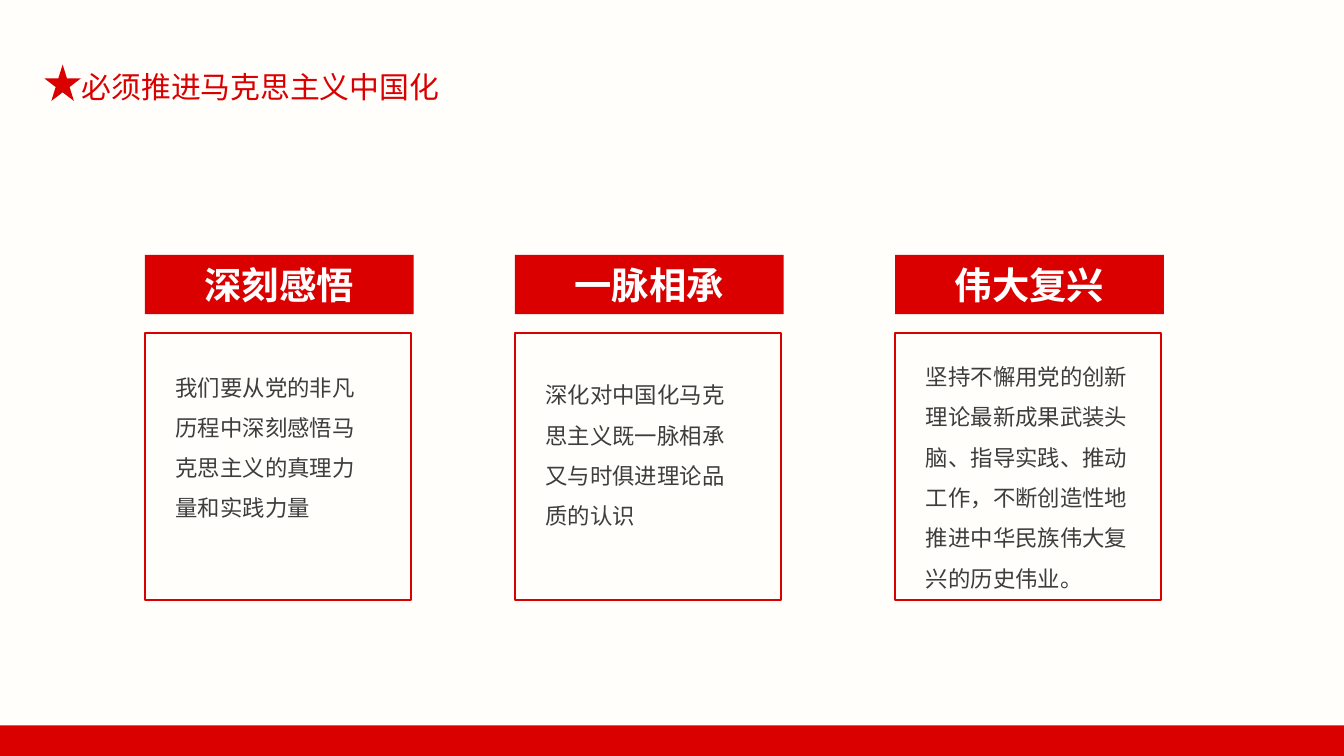
from dataclasses import dataclass
from typing import Any, Optional

import pptx
import pptx.dml.color
import pptx.enum.shapes
import pptx.enum.text
import pptx.oxml.ns
import pptx.util
from lxml import etree

Cm = pptx.util.Cm
Pt = pptx.util.Pt
Kind = pptx.enum.shapes.MSO_SHAPE
Align = pptx.enum.text.PP_ALIGN
Anchor = pptx.enum.text.MSO_ANCHOR


@dataclass(frozen=True)
class Theme:
    paper: str = "FFFEFB"
    red: str = "DA0000"
    white: str = "FFFFFF"
    ink: str = "3D3D3D"
    title_font: str = "Calibri"
    body_font: str = "Noto Sans CJK SC"
    title_size: int = 16
    header_size: int = 20
    body_size: int = 12
    frame_width: int = 1


@dataclass(frozen=True)
class Area:
    left: float
    top: float
    width: float
    height: float

    def lengths(self) -> list[int]:
        return [Cm(n) for n in (self.left, self.top, self.width, self.height)]


@dataclass(frozen=True)
class TextStyle:
    font: str
    size: int
    color: str
    bold: bool = False
    align: Any = Align.LEFT
    spacing: float = 1.0


@dataclass(frozen=True)
class Card:
    left: float
    header: str
    body: str
    body_top: float
    body_width: float
    body_height: float


THEME = Theme()
TITLE = TextStyle(THEME.title_font, THEME.title_size, THEME.red)
HEADER = TextStyle(THEME.body_font, THEME.header_size, THEME.white, True, Align.CENTER)
BODY = TextStyle(THEME.body_font, THEME.body_size, THEME.ink, spacing=1.5)

TEXT_INDENT = 0.43
BODY_MARGINS = {
    "margin_left": Cm(0.15), "margin_right": Cm(0.15),
    "margin_top": Cm(0.08), "margin_bottom": Cm(0.08),
}

CARDS = [
    Card(2.74, "深刻感悟",
         "我们要从党的非凡历程中深刻感悟马克思主义的真理力量和实践力量",
         6.73, 4.01, 3.23),
    Card(9.73, "一脉相承",
         "深化对中国化马克思主义既一脉相承又与时俱进理论品质的认识",
         6.88, 4.01, 3.23),
    Card(16.92, "伟大复兴",
         "坚持不懈用党的创新理论最新成果武装头脑、指导实践、推动工作，"
         "不断创造性地推进中华民族伟大复兴的历史伟业。",
         6.53, 4.24, 4.67),
]


def rgb(value: str) -> pptx.dml.color.RGBColor:
    return pptx.dml.color.RGBColor.from_string(value)


def apply(target: Any, values: dict[str, Any]) -> None:
    for name, value in values.items():
        setattr(target, name, value)


def write(box: Any, text: str, style: TextStyle, frame: dict[str, Any]) -> None:
    apply(box.text_frame, {"word_wrap": True, **frame})
    para = box.text_frame.paragraphs[0]
    apply(para, {"alignment": style.align, "line_spacing": style.spacing})
    span = para.add_run()
    span.text = text
    apply(span.font, {"name": style.font, "size": Pt(style.size), "bold": style.bold})
    span.font.color.rgb = rgb(style.color)
    # Chinese glyphs take the East Asian typeface
    if style.font == THEME.body_font:
        east_asian = etree.SubElement(
            span.font._element, pptx.oxml.ns.qn("a:ea"))
        east_asian.set("typeface", style.font)


def add_text(shapes: Any, area: Area, text: str, style: TextStyle,
             frame: dict[str, Any]) -> None:
    write(shapes.add_textbox(*area.lengths()), text, style, frame)


def add_figure(shapes: Any, kind: Any, area: Area, fill: Optional[str] = None,
               line: Optional[str] = None) -> Any:
    figure = shapes.add_shape(kind, *area.lengths())
    figure.shadow.inherit = False
    if fill:
        figure.fill.solid()
        figure.fill.fore_color.rgb = rgb(fill)
    else:
        figure.fill.background()
    if line:
        figure.line.color.rgb = rgb(line)
        figure.line.width = Pt(THEME.frame_width)
    else:
        figure.line.fill.background()
    return figure


def add_card(page: Any, card: Card) -> None:
    shapes = page.shapes.add_group_shape().shapes
    body_area = Area(card.left + TEXT_INDENT, card.body_top,
                     card.body_width, card.body_height)
    add_text(shapes, body_area, card.body, BODY, BODY_MARGINS)
    header = add_figure(shapes, Kind.RECTANGLE, Area(card.left, 4.82, 5.08, 1.12),
                        fill=THEME.red)
    write(header, card.header, HEADER, {"vertical_anchor": Anchor.MIDDLE})
    add_figure(shapes, Kind.RECTANGLE, Area(card.left, 6.3, 5.03, 5.05),
               line=THEME.red)


def main() -> None:
    deck = pptx.Presentation()
    apply(deck, {"slide_width": Cm(25.4), "slide_height": Cm(14.29)})
    page = deck.slides.add_slide(deck.slide_layouts[6])
    page.background.fill.solid()
    page.background.fill.fore_color.rgb = rgb(THEME.paper)

    # Title, footer band and star
    add_text(page.shapes, Area(1.3, 1.17, 7.67, 0.94), "必须推进马克思主义中国化",
             TITLE, {})
    add_figure(page.shapes, Kind.RECTANGLE, Area(0, 13.71, 25.4, 0.58), fill=THEME.red)
    add_figure(page.shapes, Kind.STAR_5_POINT, Area(0.84, 1.22, 0.69, 0.69),
               fill=THEME.red)

    # Three cards
    for card in CARDS:
        add_card(page, card)

    deck.save("out.pptx")


if __name__ == "__main__":
    main()
